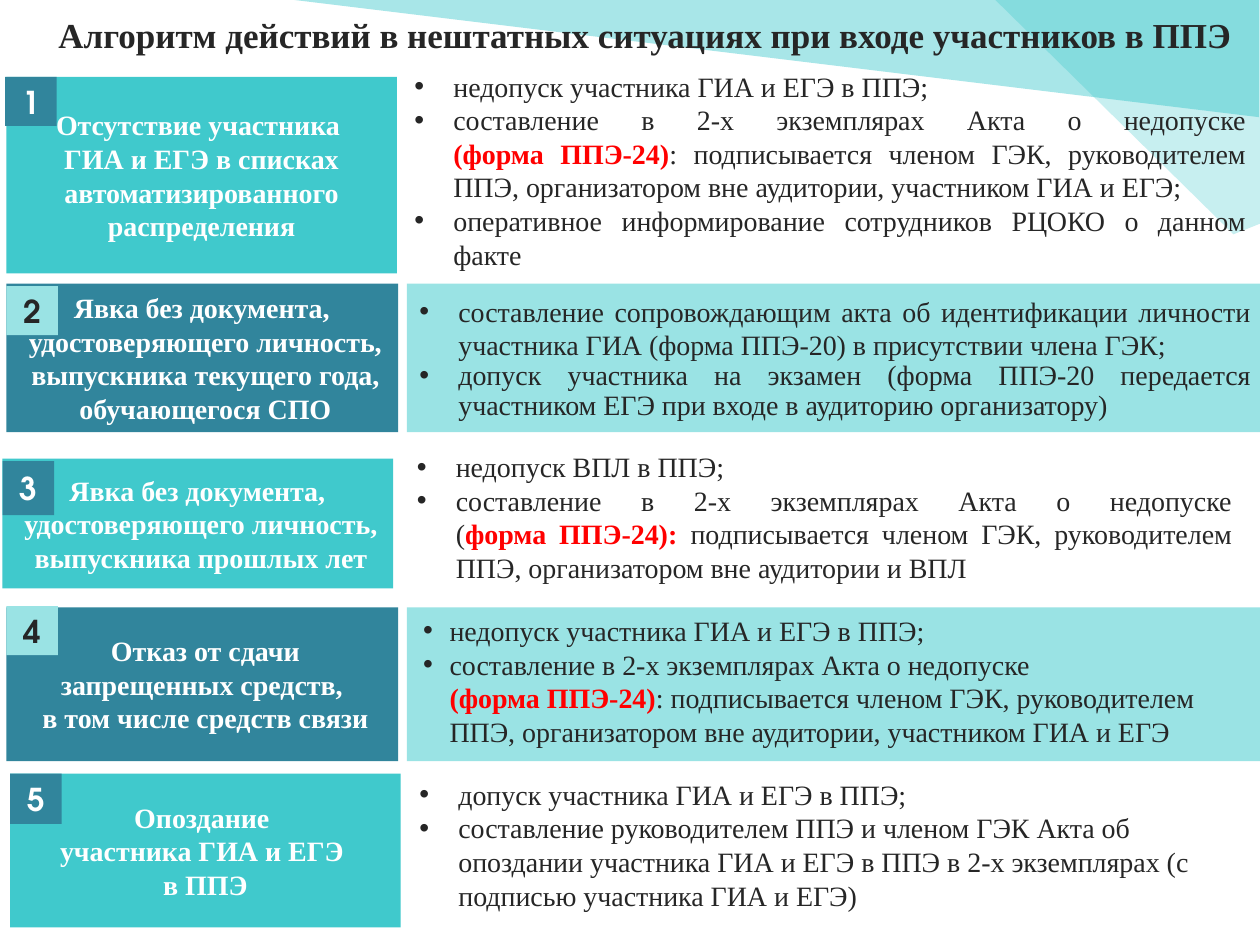
from dataclasses import dataclass
from typing import Optional

from lxml import etree
from pptx import Presentation, util as u
from pptx.dml.color import RGBColor
from pptx.enum import shapes, text
from pptx.oxml import ns

SERIF, ROUND = "Times New Roman", "TeX Gyre Adventor"
TEAL, BLUE, PALE = "40C9CC", "31859C", "9AE3E4"
WHITE, DARK, RED, AQUA = "FFFFFF", "262626", "FF0000", "20C0C4"
CENTER, JUSTIFY, LEFT = text.PP_ALIGN.CENTER, text.PP_ALIGN.JUSTIFY, text.PP_ALIGN.LEFT
MIDDLE, TOP = text.MSO_ANCHOR.MIDDLE, text.MSO_ANCHOR.TOP

Area = tuple[float, float, float, float]


@dataclass
class Situation:
    card: Area
    badge: Area
    card_fill: str
    badge_fill: str
    badge_color: str
    title: str
    answer: Area
    items: list[str]  # text between asterisks is red and bold
    align: text.PP_ALIGN
    hang: float = 0.31
    panel: Optional[Area] = None
    anchor: text.MSO_ANCHOR = TOP
    title_indent: float = 0
    tight_last: bool = False


def paint(target, color: str) -> None:
    target.solid()
    target.fore_color.rgb = RGBColor.from_string(color)


def add_rect(page, area: Area, color: str):
    box = page.shapes.add_shape(shapes.MSO_SHAPE.RECTANGLE, *map(u.Inches, area))
    box.shadow.inherit = False
    paint(box.fill, color)
    box.line.fill.background()
    return box


def style(para, size: int, color: str, font: str = SERIF, bold: bool = False) -> None:
    para.font.size = u.Pt(size)
    para.font.name = font
    para.font.bold = bold
    para.font.color.rgb = RGBColor.from_string(color)


def write_centered(box, words: str, size: int, color: str,
                   font: str = SERIF, indent: float = 0) -> None:
    frame = box.text_frame
    frame.word_wrap = True
    frame.vertical_anchor = MIDDLE
    para = frame.paragraphs[0]
    para.text = words
    para.alignment = CENTER
    style(para, size, color, font, bold=True)
    if indent:
        para._p.get_or_add_pPr().set("marL", str(u.Inches(indent)))


def add_bullet(para, hang: float) -> None:
    props = para._p.get_or_add_pPr()
    props.set("marL", str(u.Inches(0.31)))
    props.set("indent", str(u.Inches(-hang)))
    props.insert_element_before(
        etree.Element(ns.qn("a:buFont"), typeface="Arial"), "a:tabLst", "a:defRPr")
    props.insert_element_before(
        etree.Element(ns.qn("a:buChar"), char="•"), "a:tabLst", "a:defRPr")


def write_item(para, item: str, align: text.PP_ALIGN, hang: float) -> None:
    para.alignment = align
    for number, part in enumerate(item.split("*")):
        for row, words in enumerate(part.split("\n")):
            if row:
                para.add_line_break()
            if words:
                span = para.add_run()
                span.text = words
                if number % 2:
                    span.font.bold = True
                    span.font.color.rgb = RGBColor.from_string(RED)
    style(para, 16, DARK)
    add_bullet(para, hang)


def draw_situation(page, number: int, case: Situation) -> None:
    # Card with its number
    card = add_rect(page, case.card, case.card_fill)
    write_centered(card, case.title, 16, WHITE, indent=case.title_indent)
    badge = add_rect(page, case.badge, case.badge_fill)
    write_centered(badge, str(number), 18, case.badge_color, ROUND)
    # Panel and list of actions
    if case.panel:
        add_rect(page, case.panel, PALE)
    box = page.shapes.add_textbox(*map(u.Inches, case.answer))
    frame = box.text_frame
    frame.word_wrap = True
    frame.vertical_anchor = case.anchor
    for index, item in enumerate(case.items):
        para = frame.add_paragraph() if index else frame.paragraphs[0]
        write_item(para, item, case.align, case.hang)
    if case.tight_last:
        para.line_spacing = 0.9


def add_facet(page, points: list[tuple[float, float]], opacity: int) -> None:
    corners = [(u.Inches(x), u.Inches(y)) for x, y in points]
    builder = page.shapes.build_freeform(*corners[0])
    builder.add_line_segments(corners[1:], close=True)
    facet = builder.convert_to_shape()
    facet.shadow.inherit = False
    paint(facet.fill, AQUA)
    facet.line.fill.background()
    color = facet._element.spPr.find(".//" + ns.qn("a:srgbClr"))
    etree.SubElement(color, ns.qn("a:alpha"), val=str(opacity * 1000))


SITUATIONS = [
    Situation((0.05, 0.61, 3.1, 1.56), (0.04, 0.61, 0.41, 0.39), TEAL, BLUE, WHITE,
              "Отсутствие участника \nГИА и ЕГЭ в списках автоматизированного распределения",
              (3.19, 0.5, 6.8, 1.72),
              ["недопуск участника ГИА и ЕГЭ в ППЭ;",
               "составление в 2-х экземплярах Акта о недопуске\n*(форма ППЭ-24)*: подписывается "
               "членом ГЭК, руководителем ППЭ, организатором вне аудитории, участником ГИА и ЕГЭ; ",
               "оперативное информирование сотрудников РЦОКО о данном факте"],
              JUSTIFY),
    Situation((0.05, 2.25, 3.11, 1.18), (0.05, 2.27, 0.41, 0.39), BLUE, PALE, DARK,
              "Явка без документа,  удостоверяющего личность, выпускника текущего года, "
              "обучающегося СПО",
              (3.23, 2.25, 6.8, 1.18),
              ["составление сопровождающим акта об идентификации личности участника ГИА "
               "(форма ППЭ-20) в присутствии члена ГЭК;",
               "допуск участника на экзамен (форма ППЭ-20 передается участником ЕГЭ при входе "
               "в аудиторию организатору)"],
              JUSTIFY, panel=(3.23, 2.25, 6.8, 1.18), anchor=MIDDLE, title_indent=0.05,
              tight_last=True),
    Situation((0.02, 3.64, 3.1, 1.03), (0.02, 3.66, 0.41, 0.43), TEAL, BLUE, WHITE,
              "Явка без документа,  удостоверяющего личность, выпускника прошлых лет",
              (3.21, 3.52, 6.67, 1.18),
              ["недопуск ВПЛ в ППЭ;",
               "составление в 2-х экземплярах Акта о недопуске\n(*форма ППЭ-24): *подписывается "
               "членом ГЭК, руководителем ППЭ, организатором вне аудитории и ВПЛ"],
              JUSTIFY, title_indent=0.05),
    Situation((0.05, 4.82, 3.11, 1.22), (0.05, 4.81, 0.41, 0.39), BLUE, PALE, DARK,
              "Отказ от сдачи\nзапрещенных средств, \nв том числе средств связи",
              (3.16, 4.82, 6.9, 1.18),
              ["недопуск участника ГИА и ЕГЭ в ППЭ;",
               "составление в 2-х экземплярах Акта о недопуске\n*(форма ППЭ-24)*: подписывается "
               "членом ГЭК, руководителем ППЭ, организатором вне аудитории, участником ГИА и ЕГЭ"],
              LEFT, hang=0.21, panel=(3.23, 4.82, 6.79, 1.22), title_indent=0.05),
    Situation((0.08, 6.14, 3.1, 1.22), (0.08, 6.14, 0.41, 0.4), TEAL, BLUE, WHITE,
              "Опоздание \nучастника ГИА и ЕГЭ \nв ППЭ",
              (3.23, 6.12, 6.77, 1.18),
              ["допуск участника ГИА и ЕГЭ в ППЭ;",
               "составление руководителем ППЭ и членом ГЭК Акта об опоздании участника ГИА и ЕГЭ "
               "в ППЭ в 2-х экземплярах (с подписью участника ГИА и ЕГЭ)"],
              LEFT),
]


def main() -> None:
    deck = Presentation()
    deck.slide_width, deck.slide_height = u.Inches(10), u.Inches(7.5)
    page = deck.slides.add_slide(deck.slide_layouts[6])

    # Corner decoration
    add_facet(page, [(2.17, -0.02), (9.99, 0.93), (9.99, -0.03)], 39)
    add_facet(page, [(10.04, 1.76), (9.79, 1.86), (7.9, 0), (10.03, 0), (10.03, 1.78)], 25)

    # Heading
    heading = page.shapes.add_textbox(*map(u.Inches, (0.22, 0.07, 9.8, 0.4)))
    write_centered(heading, "Алгоритм действий в нештатных ситуациях при входе участников в ППЭ",
                   20, DARK)

    # Situations
    for number, case in enumerate(SITUATIONS, start=1):
        draw_situation(page, number, case)

    deck.save("out.pptx")


if __name__ == "__main__":
    main()
